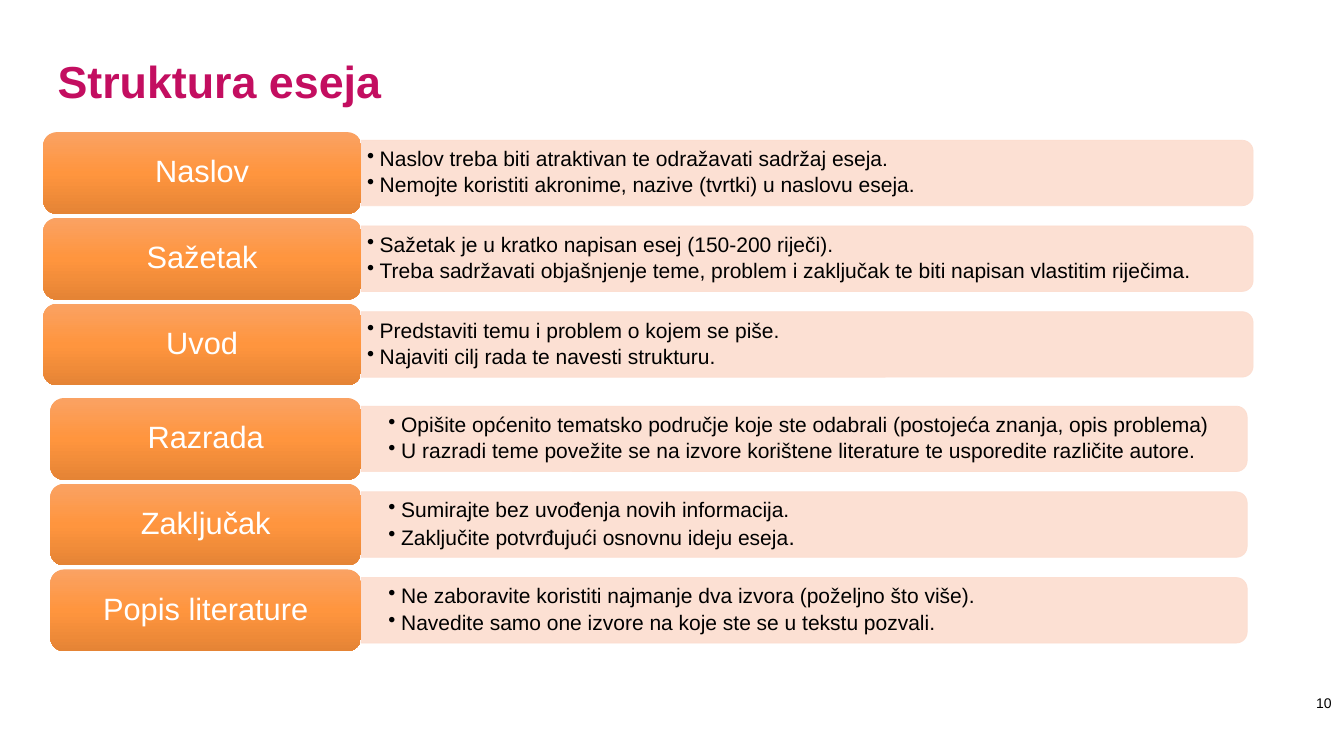
from copy import deepcopy

from pptx import Presentation
from pptx.dml.color import RGBColor as RGB
from pptx.enum.shapes import MSO_SHAPE as Shape
from pptx.enum.text import MSO_ANCHOR as Anchor, MSO_AUTO_SIZE as Fit, PP_ALIGN as Align
from pptx.oxml.ns import qn
from pptx.oxml.xmlchemy import OxmlElement as Node
from pptx.util import Cm, Pt

HEX = {"title": "C30E60", "text": "000000", "label": "FFFFFF", "bar": "FCDDCF",
       "light": "FAA263", "mid": "FF953E", "dark": "E58435"}
PITCH, TALL, THIN, EDGE = 2.16, 2.06, 1.65, 9.1

GROUPS = [
    {"left": 1.09, "top": 3.33, "wide": 22.48, "pad": (0.15, 0.08), "rows": [
        ("Naslov", ["Naslov treba biti atraktivan te odražavati sadržaj eseja.",
                    "Nemojte koristiti akronime, nazive (tvrtki) u naslovu eseja."]),
        ("Sažetak", ["Sažetak je u kratko napisan esej (150-200 riječi).",
                     "Treba sadržavati objašnjenje teme, problem i zaključak "
                     "te biti napisan vlastitim riječima."]),
        ("Uvod", ["Predstaviti temu i problem o kojem se piše.",
                  "Najaviti cilj rada te navesti strukturu."])]},
    {"left": 1.27, "top": 10.03, "wide": 22.33, "pad": (0.69, 0.36), "rows": [
        ("Razrada", ["Opišite općenito tematsko područje koje ste odabrali "
                     "(postojeća znanja, opis problema)",
                     "U razradi teme povežite se na izvore korištene literature "
                     "te usporedite različite autore."]),
        ("Zaključak", ["Sumirajte bez uvođenja novih informacija.",
                       "Zaključite potvrđujući osnovnu ideju eseja|."]),
        ("Popis literature", ["Ne zaboravite koristiti najmanje dva izvora (poželjno što više).",
                              "Navedite samo one izvore na koje ste se u tekstu pozvali."])]},
]


def put(obj, vals):
    """Set each named value on an object."""
    for name, val in vals.items():
        setattr(obj, name, val)


class Deck:
    """Hold the style and the current slide."""

    def __init__(self):
        """Open a wide deck with one titled slide."""
        self.show = Presentation()
        put(self.show, {"slide_width": Cm(33.87), "slide_height": Cm(19.05)})
        self.slide = self.show.slides.add_slide(self.show.slide_layouts[5])
        self.shapes = self.slide.shapes

    def frame(self, shape, pad, anchor, fit=Fit.NONE):
        """Format a text frame and return it."""
        left, top, right, base = map(Cm, pad)
        put(shape.text_frame, {"margin_left": left, "margin_top": top,
                               "margin_right": right, "margin_bottom": base,
                               "word_wrap": True, "auto_size": fit,
                               "vertical_anchor": anchor})
        return shape.text_frame

    def say(self, par, text, size, hue, align=Align.LEFT, bold=False, space=0.9):
        """Add one formatted run to a paragraph."""
        put(par, {"alignment": align, "line_spacing": space})
        run = par.add_run()
        run.text = text
        put(run.font, {"name": "Arial", "size": Pt(size), "bold": bold})
        run.font.color.rgb = RGB.from_string(HEX[hue])

    def title(self, text):
        """Place the slide title."""
        box = self.shapes.title
        put(box, {"left": Cm(1.45), "top": Cm(0.97), "width": Cm(31.01), "height": Cm(1.88)})
        frame = self.frame(box, (0, 0.13, 0.25, 0.13), Anchor.BOTTOM)
        self.say(frame.paragraphs[0], text, 32, "title", bold=True)

    def number(self, text):
        """Place the page number."""
        box = self.shapes.add_textbox(Cm(32.51), Cm(17.37), Cm(1.3), Cm(0.69))
        frame = self.frame(box, (0.25, 0.13, 0.25, 0.13), Anchor.TOP, Fit.SHAPE_TO_FIT_TEXT)
        self.say(frame.paragraphs[0], text, 10, "text", Align.RIGHT, space=1.0)

    def bar(self, mid, wide):
        """Draw a pale bar rounded at its right end."""
        bar = self.shapes.add_shape(Shape.ROUND_2_SAME_RECTANGLE,
                                    Cm(EDGE + (wide - THIN) / 2), Cm(mid - wide / 2),
                                    Cm(THIN), Cm(wide))
        bar.rotation = 90
        bar.shadow.inherit = False
        bar.fill.solid()
        bar.line.width = Pt(0.5)
        for paint in (bar.fill.fore_color, bar.line.color):
            paint.rgb = RGB.from_string(HEX["bar"])
        for tint in bar._element.spPr.iter(qn("a:srgbClr")):
            alpha = Node("a:alpha")
            alpha.set("val", "90000")
            tint.append(alpha)

    def points(self, mid, wide, pad, lines):
        """Place the bulleted lines over a bar."""
        box = self.shapes.add_textbox(Cm(EDGE), Cm(mid - 0.74), Cm(wide - 0.09), Cm(1.48))
        frame = self.frame(box, pad * 2, Anchor.MIDDLE)
        for i, line in enumerate(lines):
            par = frame.add_paragraph() if i else frame.paragraphs[0]
            props = par._p.get_or_add_pPr()
            put(par, {"level": 1, "space_after": Pt(2.6)})
            props.set("marL", str(Cm(0.32)))
            props.set("indent", str(-Cm(0.32)))
            mark = Node("a:buChar")
            mark.set("char", "•")
            props.append(mark)
            for text, size in zip(line.split("|"), (15, 16)):
                self.say(par, text, size, "text")

    def label(self, left, top, text):
        """Draw an orange label with centred text."""
        box = self.shapes.add_shape(Shape.ROUNDED_RECTANGLE, Cm(left), Cm(top),
                                    Cm(EDGE - left), Cm(TALL))
        box.shadow.inherit = False
        box.line.fill.background()
        box.fill.gradient()
        box.fill.gradient_angle = 270
        stops = box._element.spPr.find(qn("a:gradFill")).find(qn("a:gsLst"))
        stops.append(deepcopy(stops[0]))
        for i, (stop, hue) in enumerate(zip(box.fill.gradient_stops, ("light", "mid", "dark"))):
            stop.position = i / 2
            stop.color.rgb = RGB.from_string(HEX[hue])
        frame = self.frame(box, (0.23, 0.13) * 2, Anchor.MIDDLE)
        self.say(frame.paragraphs[0], text, 22, "label", Align.CENTER)


def main():
    """Build and save the slide."""
    deck = Deck()
    deck.title("Struktura eseja")
    for group in GROUPS:
        for i, (name, lines) in enumerate(group["rows"]):
            top = group["top"] + i * PITCH
            mid = top + TALL / 2
            deck.bar(mid, group["wide"])
            deck.points(mid, group["wide"], group["pad"], lines)
            deck.label(group["left"], top, name)
    deck.number("10")
    deck.show.save("out.pptx")


if __name__ == "__main__":
    main()
